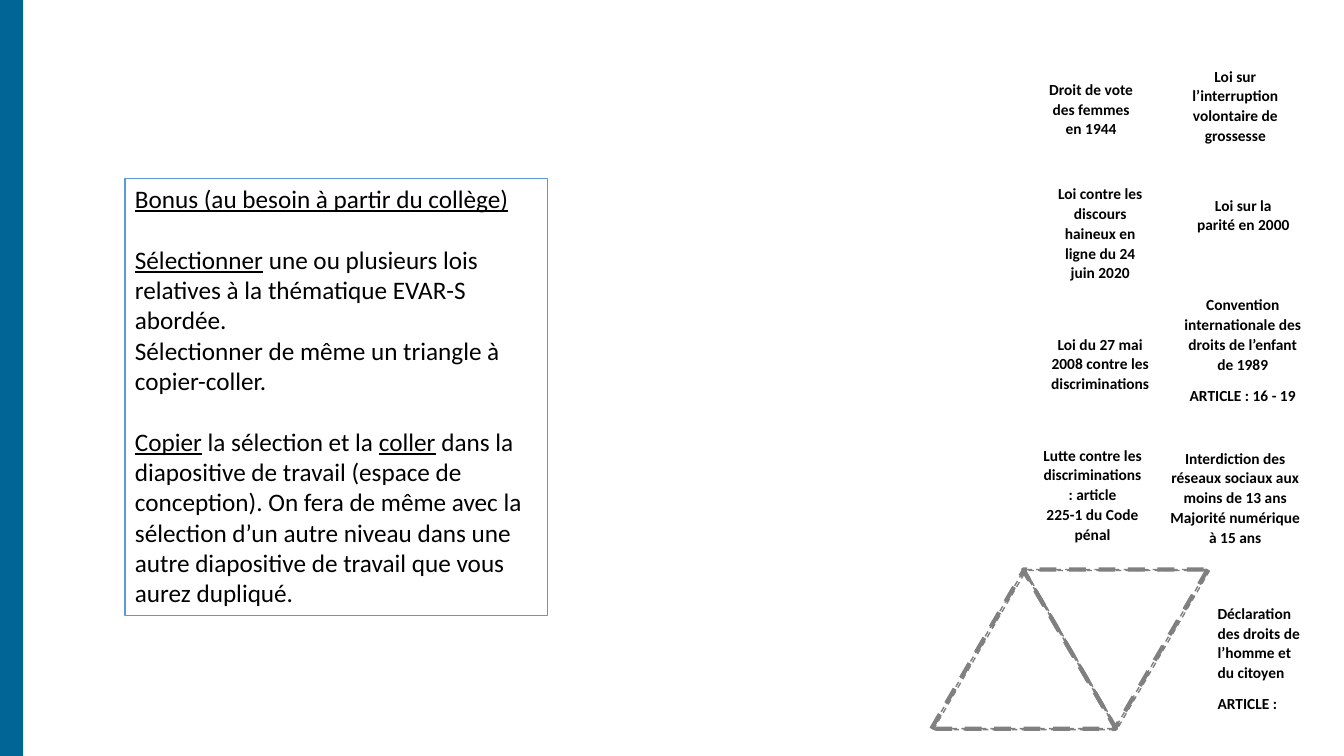
from typing import NamedTuple

from pptx import Presentation
from pptx import util as u
from pptx.dml import color as colors
from pptx.enum import dml, shapes, text

FONT = "Calibri"
BLACK, WHITE, GREY = "000000", "FFFFFF", "808080"
BAR_BLUE, FRAME_BLUE = "016695", "5B9BD5"
CENTER, LEFT = text.PP_ALIGN.CENTER, text.PP_ALIGN.LEFT
RECTANGLE = shapes.MSO_SHAPE.RECTANGLE
TRIANGLE = shapes.MSO_SHAPE.ISOSCELES_TRIANGLE


class Area(NamedTuple):
    left: float
    top: float
    width: float
    height: float


class Law(NamedTuple):
    area: Area
    lines: tuple[str, ...]
    align: int = CENTER
    first_gap: float = 8


class Triangle(NamedTuple):
    left: float
    top: float
    rotation: float


class Stroke(NamedTuple):
    shift_x: float
    shift_y: float
    weight: float


class Words(NamedTuple):
    content: str
    underline: bool = False


class Instruction(NamedTuple):
    words: tuple[Words, ...]
    gap_before: float = 0


LAWS = (
    Law(Area(862.6, 427, 77, 106.6),
        ("Déclaration des droits de l’homme et du citoyen", "ARTICLE :"), LEFT),
    Law(Area(836.6, 206.6, 102.2, 102.2),
        ("Convention internationale des droits de l’enfant de 1989", "ARTICLE : 16 - 19")),
    Law(Area(738, 52.6, 82.8, 83.5), ("Droit de vote des femmes en 1944",)),
    Law(Area(841, 43.2, 82.8, 83.5), ("Loi sur l’interruption volontaire de grossesse",)),
    Law(Area(846.7, 135.4, 82.8, 83.5), ("Loi sur la parité en 2000",)),
    Law(Area(741.6, 234.7, 88.6, 83.5), ("Loi du 27 mai 2008 contre les discriminations",)),
    Law(Area(744.5, 127.4, 82.8, 83.5),
        ("Loi contre les discours haineux en ligne du 24 juin 2020",)),
    Law(Area(825.1, 316.1, 114.5, 102.2),
        ("Interdiction des réseaux sociaux aux moins de 13 ans", "Majorité numérique à 15 ans"),
        first_gap=0),
    Law(Area(735.8, 313.9, 89.3, 83.5),
        ("Lutte contre les discriminations : article", "225-1 du Code pénal"), first_gap=0),
)

TRIANGLES = (Triangle(665.3, 407.5, 0), Triangle(730.8, 406.8, 180))
STROKES = (Stroke(1.4, 0.7, 1), Stroke(0, 0, 1), Stroke(0, 0, 3))

INSTRUCTIONS = (
    Instruction((Words("Bonus (au besoin à partir du collège)", True),)),
    Instruction((
        Words("Sélectionner", True),
        Words(" une ou plusieurs lois relatives à la thématique EVAR-S abordée."),
    ), 22),
    Instruction((Words("Sélectionner de même un triangle à copier-coller."),)),
    Instruction((
        Words("Copier", True),
        Words(" la sélection et la "),
        Words("coller", True),
        Words(" dans la diapositive de travail (espace de conception). On fera de même avec "
              "la sélection d’un autre niveau dans une autre diapositive de travail que vous "
              "aurez dupliqué."),
    ), 22),
)


def rgb(value: str) -> colors.RGBColor:
    return colors.RGBColor.from_string(value)


def points(area: Area) -> list[u.Length]:
    return [u.Pt(length) for length in area]


def set_font(para, size: float, bold: bool = False) -> None:
    para.font.name = FONT
    para.font.size = u.Pt(size)
    para.font.bold = bold
    para.font.color.rgb = rgb(BLACK)


def add_shape(page, kind: int, area: Area, fill: str | None = None,
              line: str | None = None, weight: float = 1):
    shape = page.shapes.add_shape(kind, *points(area))
    shape.shadow.inherit = False
    if fill:
        shape.fill.solid()
        shape.fill.fore_color.rgb = rgb(fill)
    else:
        shape.fill.background()
    if line:
        shape.line.color.rgb = rgb(line)
        shape.line.width = u.Pt(weight)
    else:
        shape.line.fill.background()
    return shape


def add_law(page, law: Law) -> None:
    frame = page.shapes.add_textbox(*points(law.area)).text_frame
    frame.word_wrap = True
    for index, line in enumerate(law.lines):
        para = frame.add_paragraph() if index else frame.paragraphs[0]
        para.text = line
        para.alignment = law.align
        para.line_spacing = 1.07
        para.space_after = u.Pt(8 if index else law.first_gap)
        set_font(para, 11, bold=True)


def add_triangle(page, triangle: Triangle) -> None:
    for stroke in STROKES:
        area = Area(triangle.left + stroke.shift_x, triangle.top + stroke.shift_y, 131.8, 113)
        shape = add_shape(page, TRIANGLE, area, line=GREY, weight=stroke.weight)
        shape.line.dash_style = dml.MSO_LINE.DASH
        shape.rotation = triangle.rotation


def add_instructions(page) -> None:
    box = add_shape(page, RECTANGLE, Area(89.3, 127.4, 301.7, 312.5), WHITE, FRAME_BLUE)
    frame = box.text_frame
    frame.word_wrap = True
    frame.auto_size = text.MSO_AUTO_SIZE.SHAPE_TO_FIT_TEXT
    frame.vertical_anchor = text.MSO_ANCHOR.TOP
    for index, instruction in enumerate(INSTRUCTIONS):
        para = frame.add_paragraph() if index else frame.paragraphs[0]
        para.alignment = LEFT
        para.space_before = u.Pt(instruction.gap_before)
        set_font(para, 18)
        for words in instruction.words:
            span = para.add_run()
            span.text = words.content
            span.font.underline = words.underline
            span.font.color.rgb = rgb(BLACK)


def main() -> None:
    deck = Presentation()
    deck.slide_width, deck.slide_height = u.Pt(960), u.Pt(540)
    page = deck.slides.add_slide(deck.slide_layouts.get_by_name("Blank"))
    for law in LAWS:
        add_law(page, law)
    for triangle in TRIANGLES:
        add_triangle(page, triangle)
    add_instructions(page)
    add_shape(page, RECTANGLE, Area(0, 0, 16.6, 540), BAR_BLUE)
    deck.save("out.pptx")


if __name__ == "__main__":
    main()
